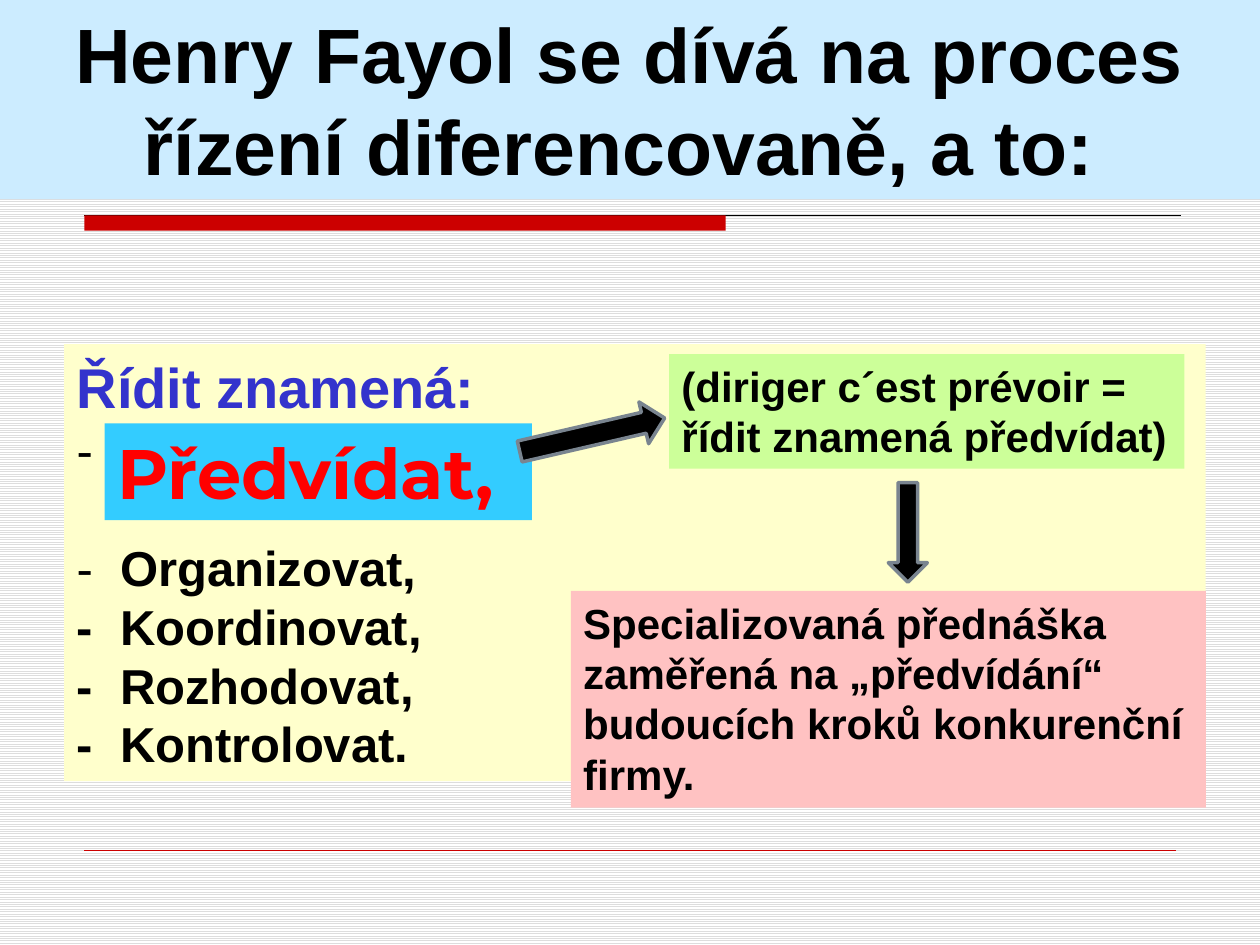
from dataclasses import dataclass

from pptx import Presentation
from pptx.dml.color import RGBColor
from pptx.enum.dml import MSO_PATTERN
from pptx.enum.shapes import MSO_CONNECTOR, MSO_SHAPE as Preset
from pptx.enum.text import MSO_ANCHOR as Anchor, PP_ALIGN as Align
from pptx.oxml import parse_xml
from pptx.oxml.ns import nsdecls
from pptx.util import Pt


@dataclass(frozen=True)
class Theme:
    font: str = "Arial"
    accent_font: str = "Montserrat"
    black: str = "000000"
    red: str = "FF0000"
    rule_red: str = "CC0000"
    blue: str = "3333CC"
    title_fill: str = "CCECFF"
    list_fill: str = "FFFFCC"
    highlight_fill: str = "33CCFF"
    pink_fill: str = "FFC2C2"
    green_fill: str = "CCFF99"
    arrow_line: str = "79848F"
    stripe: str = "DDDDDD"
    white: str = "FFFFFF"
    title_size: int = 44
    highlight_size: int = 40
    heading_size: int = 32
    list_size: int = 28
    note_size: int = 24


THEME = Theme()


@dataclass(frozen=True)
class Box:
    left: float
    top: float
    width: float
    height: float
    fill: str
    text: str = ""
    size: int = THEME.note_size
    color: str = THEME.black
    font: str = THEME.font
    align: Align = Align.LEFT


@dataclass(frozen=True)
class Arrow:
    preset: Preset
    left: float
    top: float
    width: float
    height: float
    rotation: float = 0


@dataclass(frozen=True)
class Rule:
    left: float
    right: float
    top: float
    color: str
    weight: float


@dataclass(frozen=True)
class Item:
    text: str
    bold_dash: bool = True
    space_before: float = 0


def rgb(color: str) -> RGBColor:
    return RGBColor.from_string(color)


def style(font, size: int, color: str, name: str = THEME.font, bold: bool = True) -> None:
    font.name, font.size, font.bold = name, Pt(size), bold
    font.color.rgb = rgb(color)


def draw_shape(slide, preset: Preset, part, fill: str):
    shape = slide.shapes.add_shape(
        preset, Pt(part.left), Pt(part.top), Pt(part.width), Pt(part.height))
    shape.shadow.inherit = False
    shape.fill.solid()
    shape.fill.fore_color.rgb = rgb(fill)
    shape.line.fill.background()
    return shape


def draw_box(slide, box: Box):
    shape = draw_shape(slide, Preset.RECTANGLE, box, box.fill)
    frame = shape.text_frame
    frame.word_wrap = True
    frame.vertical_anchor = Anchor.TOP
    paragraph = frame.paragraphs[0]
    paragraph.alignment = box.align
    if box.text:
        paragraph.text = box.text
        style(paragraph.font, box.size, box.color, box.font)
    return shape


def draw_list(slide, box: Box, items: list[Item], indent: float) -> None:
    frame = draw_box(slide, box).text_frame
    frame.vertical_anchor = Anchor.MIDDLE
    for item in items:
        paragraph = frame.add_paragraph()
        paragraph.alignment = Align.LEFT
        paragraph.space_before = Pt(item.space_before)
        properties = paragraph._p.get_or_add_pPr()
        properties.set("marL", str(Pt(indent)))
        properties.set("indent", str(-Pt(indent)))
        style(paragraph.font, THEME.list_size, THEME.black, bold=item.bold_dash)
        paragraph.add_run().text = "-\t"
        if item.text:
            run = paragraph.add_run()
            run.text = item.text
            run.font.bold = True


def draw_arrow(slide, arrow: Arrow) -> None:
    shape = draw_shape(slide, arrow.preset, arrow, THEME.black)
    shape.rotation = arrow.rotation
    shape.line.color.rgb = rgb(THEME.arrow_line)
    shape.line.width = Pt(2)


def draw_rule(slide, rule: Rule) -> None:
    line = slide.shapes.add_connector(
        MSO_CONNECTOR.STRAIGHT, Pt(rule.left), Pt(rule.top), Pt(rule.right), Pt(rule.top))
    line.line.color.rgb = rgb(rule.color)
    line.line.width = Pt(rule.weight)
    line._element.spPr.append(parse_xml(f"<a:effectLst {nsdecls('a')}/>"))


RULES = [
    Rule(48.2, 674.6, 123.1, THEME.black, 0.75),
    Rule(48.2, 671.8, 486, THEME.rule_red, 0.25),
]
RED_BAR = Box(48.2, 123.1, 366.5, 8.7, THEME.rule_red)
LIST_BOX = Box(36.7, 196.6, 652.3, 249.8, THEME.list_fill,
               "Řídit znamená:", THEME.heading_size, THEME.blue)
LIST_ITEMS = [
    Item("", bold_dash=False),
    Item("Organizovat,", bold_dash=False, space_before=33.6),
    Item("Koordinovat,"),
    Item("Rozhodovat,"),
    Item("Kontrolovat."),
]
BOXES = [
    Box(59.8, 241.9, 244.1, 55.4, THEME.highlight_fill, "Předvídat,",
        THEME.highlight_size, THEME.red, THEME.accent_font),
    Box(326.2, 337.7, 362.9, 123.8, THEME.pink_fill,
        "Specializovaná přednáška zaměřená na „předvídání“ "
        "budoucích kroků konkurenční firmy."),
    Box(382.3, 202.3, 294.5, 65.5, THEME.green_fill,
        "(diriger c´est prévoir = řídit znamená předvídat)"),
    Box(0, 0, 720, 113.8, THEME.title_fill,
        "Henry Fayol se dívá na proces řízení diferencovaně, a to: ",
        THEME.title_size, align=Align.CENTER),
]
ARROWS = [
    Arrow(Preset.RIGHT_ARROW, 295.9, 236.2, 85, 24.5, 347),
    Arrow(Preset.DOWN_ARROW, 507.6, 275.8, 22.3, 56.9),
]


def main() -> None:
    presentation = Presentation()
    presentation.slide_width, presentation.slide_height = Pt(720), Pt(540)
    slide = presentation.slides.add_slide(presentation.slide_layouts[6])

    # Striped background
    background = slide.background.fill
    background.patterned()
    background.pattern = MSO_PATTERN.LIGHT_HORIZONTAL
    background.fore_color.rgb = rgb(THEME.stripe)
    background.back_color.rgb = rgb(THEME.white)

    # Rules and red bar
    for rule in RULES:
        draw_rule(slide, rule)
    draw_box(slide, RED_BAR)

    # List, coloured text boxes and arrows
    draw_list(slide, LIST_BOX, LIST_ITEMS, indent=24.9)
    for box in BOXES:
        draw_box(slide, box)
    for arrow in ARROWS:
        draw_arrow(slide, arrow)

    presentation.save("out.pptx")


if __name__ == "__main__":
    main()
